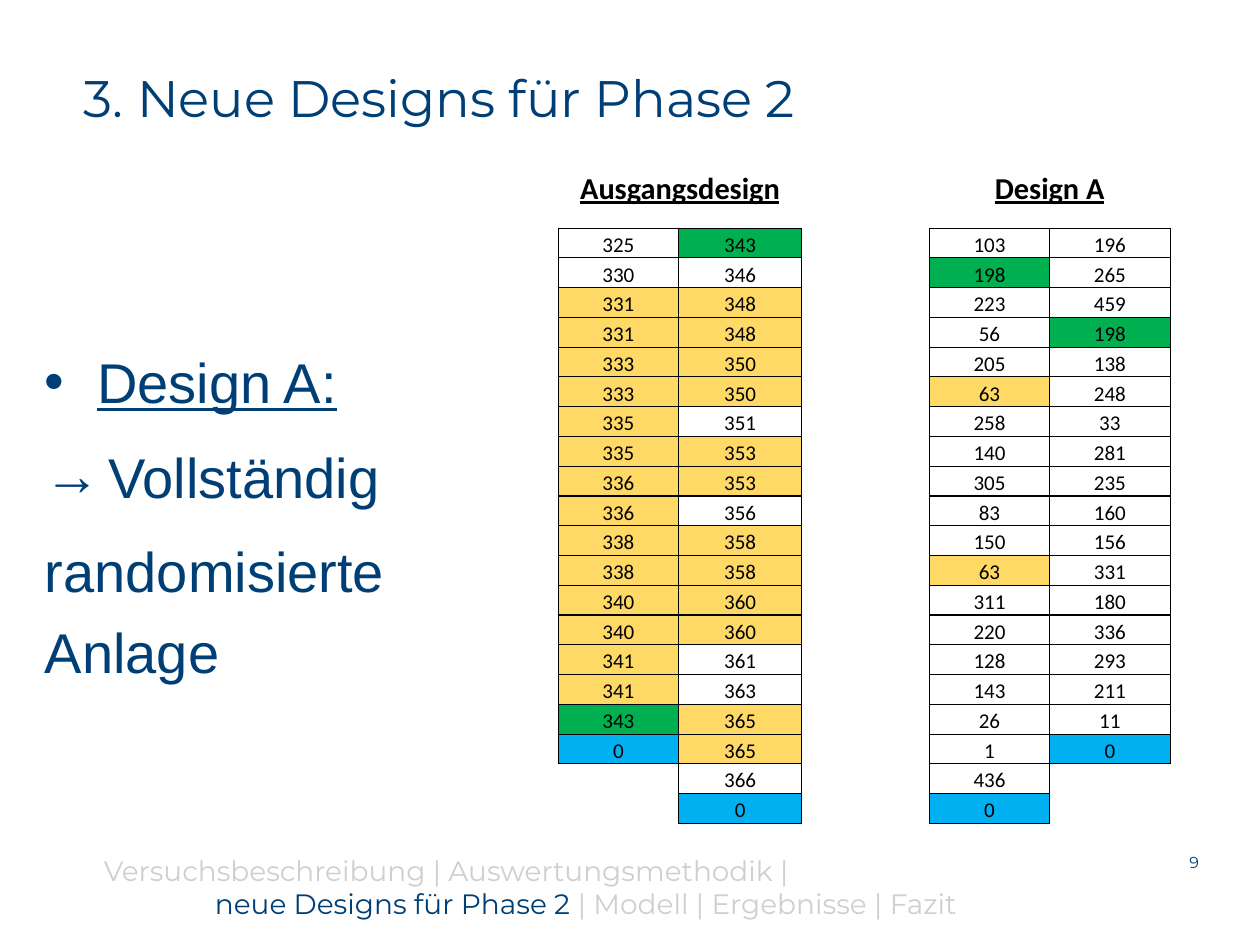
from lxml.etree import SubElement
from pptx import Presentation
from pptx.dml.color import RGBColor
from pptx.enum.text import MSO_ANCHOR as ANCHOR, PP_ALIGN as ALIGN
from pptx.oxml.ns import qn
from pptx.util import Cm, Pt

COLORS = {
    "navy": "003F75",
    "muted": "CFCFCF",
    "black": "000000",
    "across": "00B050",
    "within": "FFD966",
    "zero": "00B0F0",
}
NO_STYLE = "{2D5ABB26-0587-4C30-8999-92F81FD0307C}"
DESIGNS = {
    "Ausgangsdesign": (
        [325, 330, 331, 331, 333, 333, 335, 335, 336, 336,
         338, 338, 340, 340, 341, 341, 343, 0],
        [343, 346, 348, 348, 350, 350, 351, 353, 353, 356,
         358, 358, 360, 360, 361, 363, 365, 365, 366, 0],
    ),
    "Design A": (
        [103, 198, 223, 56, 205, 63, 258, 140, 305, 83,
         150, 63, 311, 220, 128, 143, 26, 1, 436, 0],
        [196, 265, 459, 198, 138, 248, 33, 281, 235, 160,
         156, 331, 180, 336, 293, 211, 11, 0],
    ),
}


def rgb(name):
    return RGBColor.from_string(COLORS[name])


def add_run(p, text, size, font, color="navy", **style):
    r = p.add_run()
    r.text = text
    r.font.size, r.font.name = Pt(size), font
    r.font.color.rgb = rgb(color)
    for key, value in style.items():
        setattr(r.font, key, value)


def add_text_frame(slide, box):
    tf = slide.shapes.add_textbox(*map(Cm, box)).text_frame
    tf.word_wrap = True
    return tf


def indent(p, left, first=0, bullet=None):
    pPr = p._p.get_or_add_pPr()
    pPr.set("marL", str(Cm(left)))
    pPr.set("indent", str(Cm(first)))
    if bullet:
        SubElement(pPr, qn("a:buFont"), typeface="Arial")
        SubElement(pPr, qn("a:buChar"), char=bullet)


def add_title(slide, box):
    tf = add_text_frame(slide, box)
    add_run(tf.paragraphs[0], "3. Neue Designs für Phase 2", 22, "Montserrat")


def add_description(slide, box):
    tf = add_text_frame(slide, box)
    lines = [
        ("Design A:", "•", 0.79, True),
        ("Vollständig", "→", 0.96, False),
        ("randomisierte Anlage", None, 0, False),
    ]
    for i, (text, bullet, hang, underline) in enumerate(lines):
        p = tf.add_paragraph() if i else tf.paragraphs[0]
        p.line_spacing = 1.2
        p.space_before = Pt(6)
        indent(p, hang, -hang, bullet)
        add_run(p, text, 24, "Arial", underline=underline)


def add_breadcrumb(slide, box):
    tf = add_text_frame(slide, box)
    lines = [
        (0.35, [("Versuchsbeschreibung | Auswertungsmethodik |", "muted")]),
        (2.03, [("neue Designs für Phase 2 ", "navy"),
                ("| Modell | Ergebnisse | Fazit", "muted")]),
    ]
    for i, (left, parts) in enumerate(lines):
        p = tf.add_paragraph() if i else tf.paragraphs[0]
        indent(p, left)
        for text, color in parts:
            add_run(p, text, 12, "Montserrat", color)


def add_page_number(slide, box):
    tf = add_text_frame(slide, box)
    tf.margin_left = tf.margin_right = tf.margin_top = tf.margin_bottom = 0
    p = tf.paragraphs[0]
    p.alignment = ALIGN.RIGHT
    add_run(p, "9", 6.8, "Montserrat")


def add_borders(cell, sides):
    tcPr = cell._tc.get_or_add_tcPr()
    for i, side in enumerate(sides):
        ln = tcPr.makeelement(qn(f"a:ln{side}"), {"w": str(Pt(0.5))})
        fill = SubElement(ln, qn("a:solidFill"))
        SubElement(fill, qn("a:srgbClr"), val=COLORS["black"])
        tcPr.insert(i, ln)


def fill_for(value, column, other):
    if value == 0:
        return "zero"
    if value in other:
        return "across"
    return "within" if column.count(value) > 1 else None


def set_cell(cell, text, size, anchor, sides, **style):
    cell.vertical_anchor = anchor
    p = cell.text_frame.paragraphs[0]
    p.alignment = ALIGN.CENTER
    add_run(p, text, size, "Calibri", "black", **style)
    add_borders(cell, sides)


def add_designs(slide, box):
    left, top, width, height = box
    widths = [1.82, 1.86, 1.93, 1.82, 1.82]
    row_h, gap_h = 0.45, 0.72
    sp = slide.shapes.add_table(22, 5, Cm(left), Cm(top), Cm(width), Cm(height))
    table = sp.table
    table.first_row = table.horz_banding = False
    table._tbl.tblPr.find(qn("a:tableStyleId")).text = NO_STYLE
    for col, w in zip(table.columns, widths):
        col.width = Cm(w)
    for i, row in enumerate(table.rows):
        row.height = Cm(gap_h if i == 1 else row_h)
    for cell in table.iter_cells():
        cell.margin_left = cell.margin_right = 0
        cell.margin_top = cell.margin_bottom = 0
        cell.fill.background()
        end = cell.text_frame.paragraphs[0]._p.get_or_add_endParaRPr()
        end.set("sz", "900")

    for start, (name, columns) in zip((0, 3), DESIGNS.items()):
        head = table.cell(0, start)
        head.merge(table.cell(1, start + 1))
        set_cell(head, name, 13, ANCHOR.MIDDLE, "B", bold=True, underline=True)
        for j, column in enumerate(columns):
            for i, value in enumerate(column):
                cell = table.cell(i + 2, start + j)
                set_cell(cell, str(value), 9, ANCHOR.BOTTOM, "LRTB")
                color = fill_for(value, column, columns[1 - j])
                if color:
                    cell.fill.solid()
                    cell.fill.fore_color.rgb = rgb(color)


def main():
    prs = Presentation()
    prs.slide_width, prs.slide_height = Cm(19.05), Cm(14.29)
    slide = prs.slides.add_slide(prs.slide_layouts[6])
    add_page_number(slide, (17.17, 12.9, 0.96, 0.28))
    add_title(slide, (1.02, 0.88, 17.15, 1.2))
    add_description(slide, (0.43, 4.93, 7.6, 5.74))
    add_breadcrumb(slide, (0.97, 12.78, 15.93, 1.3))
    add_designs(slide, (8.44, 2.28, 9.25, 10.17))
    prs.save("out.pptx")


if __name__ == "__main__":
    main()
